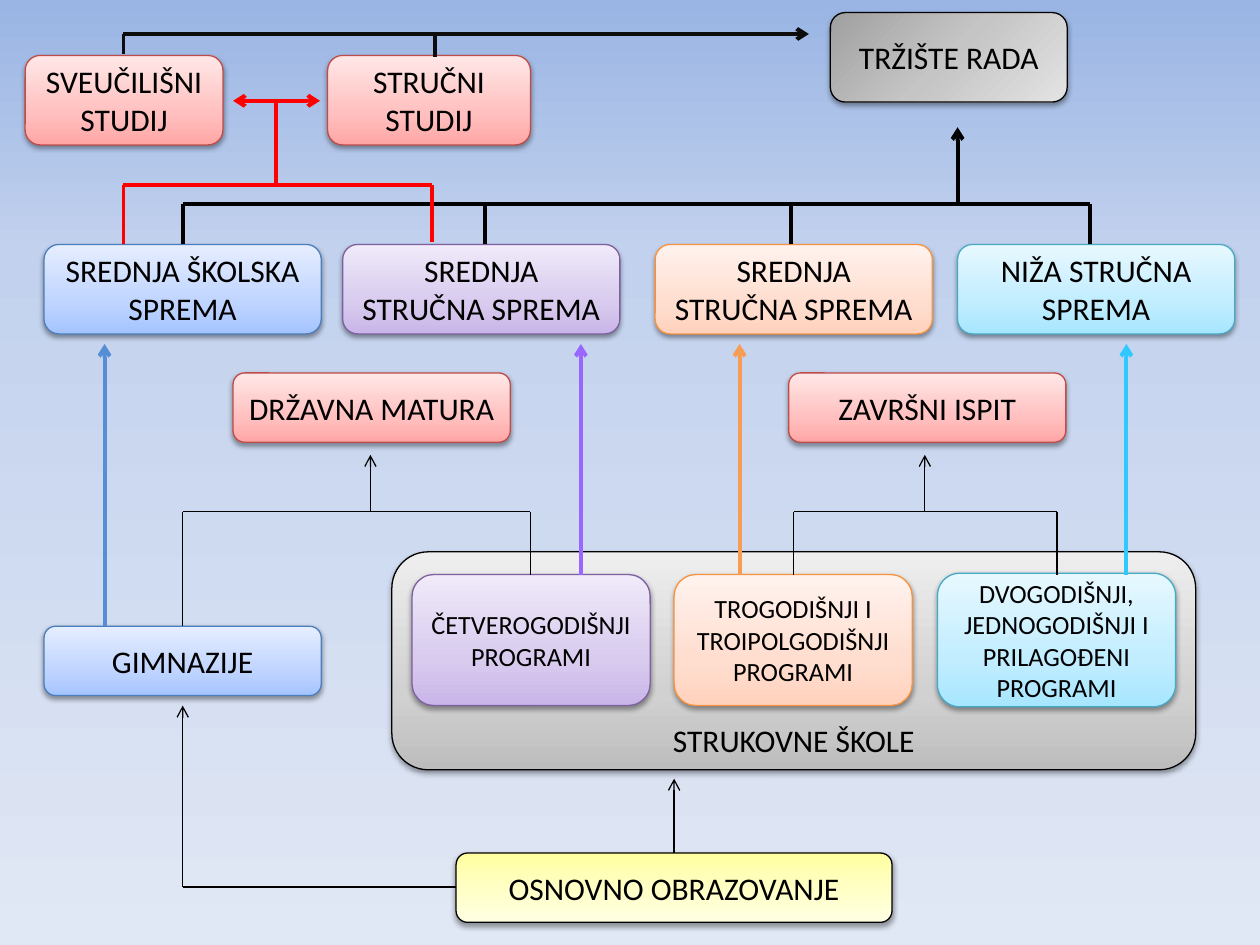
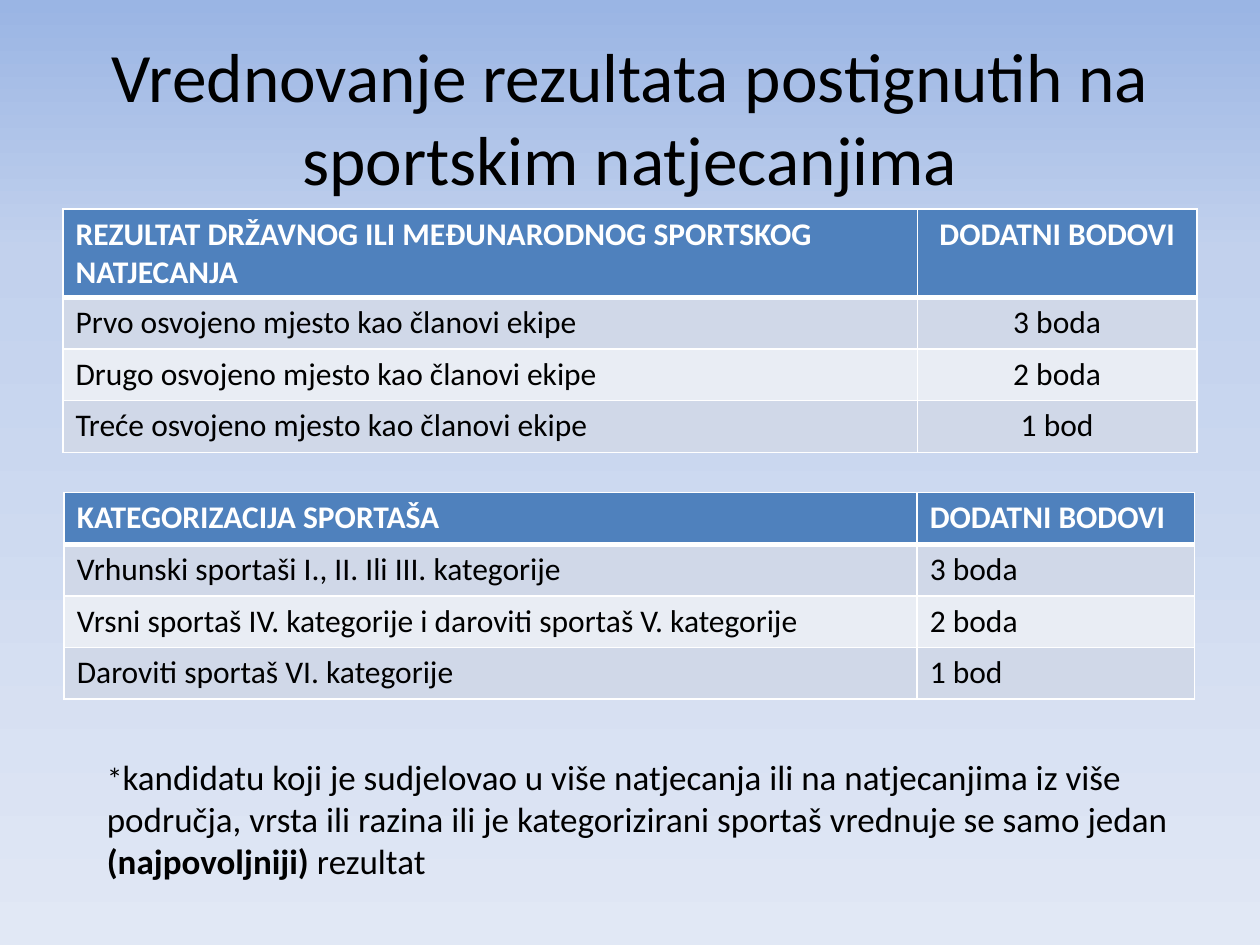
import pptx
import pptx.util
import pptx.dml.color
import pptx.enum.shapes
import pptx.enum.text
import pptx.oxml
import pptx.oxml.ns
from dataclasses import dataclass

Inches = pptx.util.Inches
Pt = pptx.util.Pt
qn = pptx.oxml.ns.qn
ALIGN = pptx.enum.text.PP_ALIGN
ANCHOR = pptx.enum.text.MSO_ANCHOR
SHAPE = pptx.enum.shapes.MSO_SHAPE
NS = 'xmlns:a="http://schemas.openxmlformats.org/drawingml/2006/main"'

FONT = "Calibri"
COLOR = {
    "black": "000000", "white": "FFFFFF", "ink": "0D0D0D", "red": "FF0000",
    "blue": "558ED5", "violet": "9966FF", "orange": "F79D53", "cyan": "2FC9FF",
    "head": "4F81BD", "odd": "D0D8E8", "even": "E9EDF4",
}
SKY = ((0, "9AB5E4"), (27, "C2D1ED"), (100, "E1E8F5"))


@dataclass(frozen=True)
class Look:
    stops: tuple
    line: str
    angle: int = 270


@dataclass(frozen=True)
class Box:
    text: str
    look: str
    x: float
    y: float
    w: float = 2.2
    h: float = 0.71
    size: float = 18
    low: bool = False


@dataclass(frozen=True)
class Wire:
    x1: float
    y1: float
    x2: float
    y2: float
    color: str = "black"
    width: float = 0.75
    tail: bool = False
    head: bool = False


@dataclass(frozen=True)
class Grid:
    x: float
    y: float
    cols: tuple
    first: float
    align: object
    rows: tuple


LOOKS = {
    "blue": Look(((0, "A4C4FF"), (35, "BFD4FF"), (100, "E6EEFF")), "4B7EBC"),
    "violet": Look(((0, "C9B5E8"), (35, "D8CBEE"), (100, "F0EAF9")), "7D60A0"),
    "orange": Look(((0, "FFD2BD"), (35, "FFDED0"), (100, "FFF2ED")), "F69240"),
    "cyan": Look(((0, "A7E6FF"), (35, "C1EDFF"), (100, "E7F8FF")), "46AAC5"),
    "red": Look(((0, "FFA6A5"), (35, "FFC0BF"), (100, "FFE7E7")), "BF4C48"),
    "gray": Look(((0, "BDBDBD"), (35, "D1D1D1"), (100, "EEEEEE")), "000000"),
    "steel": Look(((0, "A0A0A0"), (50, "C5C5C5"), (100, "E3E3E3")), "000000", 45),
    "yellow": Look(((0, "FFFFA0"), (50, "FFFFC5"), (100, "FFFFE3")), "000000", 90),
}


# Shared helpers
def rgb(code: str):
    return pptx.dml.color.RGBColor.from_string(code)


def xml(text: str):
    return pptx.oxml.parse_xml(text)


def blend(fill, root, stops: tuple, angle: int) -> None:
    """Fill with a gradient; the angle runs clockwise."""
    fill.gradient()
    fill.gradient_angle = (360 - angle) % 360
    items = next(root.iter(qn("a:gsLst")))
    for item in list(items):
        items.remove(item)
    for spot, code in stops:
        items.append(xml(f'<a:gs {NS} pos="{spot * 1000}"><a:srgbClr val="{code}"/></a:gs>'))


def write(frame, *runs, size: float = 18, color: str = "black", bold: bool = False,
          align=ALIGN.LEFT, anchor=ANCHOR.TOP) -> None:
    """Write runs, each a string or a (string, size, bold) tuple."""
    frame.word_wrap = True
    frame.vertical_anchor = anchor
    para = frame.paragraphs[0]
    para.alignment = align
    for item in runs:
        text, pts, strong = (item, size, bold) if isinstance(item, str) else item
        run = para.add_run()
        run.text = text
        run.font.name = FONT
        run.font.size = Pt(pts)
        run.font.bold = strong
        run.font.color.rgb = rgb(COLOR[color])


def add_page(deck):
    page = deck.slides.add_slide(deck.slide_layouts[6])
    blend(page.background.fill, page.element, SKY, 90)
    return page


def add_label(page, x: float, y: float, w: float, h: float, *runs, **form) -> None:
    area = page.shapes.add_textbox(Inches(x), Inches(y), Inches(w), Inches(h))
    write(area.text_frame, *runs, **form)


# Diagram parts
def draw_box(page, box: Box) -> None:
    look = LOOKS[box.look]
    shape = page.shapes.add_shape(SHAPE.ROUNDED_RECTANGLE, Inches(box.x), Inches(box.y),
                                  Inches(box.w), Inches(box.h))
    blend(shape.fill, shape.element, look.stops, look.angle)
    shape.line.color.rgb = rgb(look.line)
    shape.line.width = Pt(0.75)
    shape.shadow.inherit = False
    shape.element.spPr.find(qn("a:effectLst")).append(xml(
        f'<a:outerShdw {NS} blurRad="{Pt(3.1)}" dist="{Pt(1.6)}" dir="5400000" rotWithShape="0">'
        '<a:srgbClr val="000000"><a:alpha val="38000"/></a:srgbClr></a:outerShdw>'))
    frame = shape.text_frame
    write(frame, box.text, size=box.size, align=ALIGN.CENTER,
          anchor=ANCHOR.BOTTOM if box.low else ANCHOR.MIDDLE)
    if box.low:
        frame.margin_bottom = Inches(0)


def draw_wire(page, wire: Wire) -> None:
    line = page.shapes.add_connector(
        pptx.enum.shapes.MSO_CONNECTOR.STRAIGHT, Inches(wire.x1), Inches(wire.y1),
        Inches(wire.x2), Inches(wire.y2))
    line.line.color.rgb = rgb(COLOR[wire.color])
    line.line.width = Pt(wire.width)
    props = line.element.spPr
    for end, shown in (("headEnd", wire.head), ("tailEnd", wire.tail)):
        if shown:
            props.find(qn("a:ln")).append(xml(f'<a:{end} {NS} type="arrow"/>'))
    props.append(xml(f"<a:effectLst {NS}/>"))


def fork(roots: tuple, bus: float, tip: tuple, color: str = "black",
         width: float = 0.75, arrow: bool = True) -> list:
    """Join (x, y) roots on a level bus, then lead from it to the tip."""
    wires = [Wire(x, y, x, bus, color, width) for x, y in roots]
    wires.append(Wire(roots[0][0], bus, roots[-1][0], bus, color, width))
    wires.append(Wire(tip[0], bus, *tip, color, width, arrow))
    return wires


# Table parts
def edge(cell, side: str, width: float) -> None:
    cell._tc.get_or_add_tcPr().append(xml(
        f'<a:{side} {NS} w="{Pt(width)}"><a:solidFill>'
        f'<a:srgbClr val="{COLOR["white"]}"/></a:solidFill></a:{side}>'))


def draw_grid(page, grid: Grid) -> None:
    high = [grid.first] + [0.41] * (len(grid.rows) - 1)
    table = page.shapes.add_table(len(grid.rows), len(grid.cols), Inches(grid.x), Inches(grid.y),
                                  Inches(sum(grid.cols)), Inches(sum(high))).table
    for col, width in zip(table.columns, grid.cols):
        col.width = Inches(width)
    for r, texts in enumerate(grid.rows):
        table.rows[r].height = Inches(high[r])
        for c, text in enumerate(texts):
            cell = table.cell(r, c)
            for side in ("lnL", "lnR", "lnT", "lnB"):
                thick = (r, side) in ((0, "lnB"), (1, "lnT"))
                edge(cell, side, 3 if thick else 1)
            cell.fill.solid()
            shade = "head" if r == 0 else "odd" if r % 2 else "even"
            cell.fill.fore_color.rgb = rgb(COLOR[shade])
            write(cell.text_frame, text, color="black" if r else "white", bold=r == 0,
                  align=grid.align if c else ALIGN.LEFT)


# Slide 1: paths through the school system
BOXES = (
    Box("OSNOVNO OBRAZOVANJE", "yellow", 3.62, 6.77, 3.46, 0.55),
    Box("GIMNAZIJE", "blue", 0.35, 4.97, h=0.55),
    Box("STRUKOVNE ŠKOLE", "gray", 3.11, 4.38, 6.38, 1.73, low=True),
    Box("ČETVEROGODIŠNJI PROGRAMI", "violet", 3.27, 4.56, 1.89, 1.04, 15),
    Box("TROGODIŠNJI I TROIPOLGODIŠNJI PROGRAMI", "orange", 5.35, 4.56, 1.89, 1.04, 15),
    Box("DVOGODIŠNJI, JEDNOGODIŠNJI I PRILAGOĐENI PROGRAMI", "cyan", 7.44, 4.55, 1.89, 1.06, 15),
    Box("DRŽAVNA MATURA", "red", 1.85, 2.96, h=0.55),
    Box("ZAVRŠNI ISPIT", "red", 6.26, 2.96, h=0.55),
    Box("SREDNJA ŠKOLSKA SPREMA", "blue", 0.35, 1.94),
    Box("SREDNJA STRUČNA SPREMA", "violet", 2.72, 1.94),
    Box("SREDNJA STRUČNA SPREMA", "orange", 5.2, 1.94),
    Box("NIŽA STRUČNA SPREMA", "cyan", 7.6, 1.94),
    Box("SVEUČILIŠNI STUDIJ", "red", 0.2, 0.44, 1.57),
    Box("STRUČNI STUDIJ", "red", 2.6, 0.44, 1.61),
    Box("TRŽIŠTE RADA", "steel", 6.59, 0.1, 1.88),
)
RISERS = ((0.83, 4.97, "blue"), (4.61, 4.56, "violet"), (5.87, 4.56, "orange"), (8.94, 4.56, "cyan"))
WIRES = [
    # From primary school
    Wire(1.45, 7.04, 1.45, 5.6, tail=True),
    Wire(1.45, 7.04, 3.62, 7.04),
    Wire(5.35, 6.77, 5.35, 6.18, tail=True),
    # To the final exams
    *fork(((1.45, 4.97), (4.21, 4.56)), 4.06, (2.94, 3.61)),
    *fork(((6.3, 4.56), (8.39, 4.56)), 4.06, (7.34, 3.61)),
    # To the degrees
    *(Wire(x, y, x, 2.73, color, 2.25, True) for x, y, color in RISERS),
    # To the job market
    *fork(tuple((x, 1.94) for x in (1.45, 3.85, 6.28, 8.65)), 1.62, (7.6, 1.01), width=2.25),
    # To higher studies
    *fork(((0.98, 1.94), (3.43, 1.92)), 1.47, (2.19, 0.8), "red", 2.25, False),
    Wire(1.85, 0.8, 2.54, 0.8, "red", 2.25, True, True),
    # From studies to the job market
    Wire(0.98, 0.43, 0.98, 0.27, "ink", 2.25),
    Wire(3.45, 0.45, 3.45, 0.27, "ink", 2.25),
    Wire(0.98, 0.27, 6.42, 0.27, "ink", 2.25, True),
]

# Slide 2: points for sport results
GRIDS = (
    Grid(0.5, 1.66, (6.78, 2.22), 0.7, ALIGN.CENTER, (
        ("REZULTAT DRŽAVNOG ILI MEĐUNARODNOG SPORTSKOG NATJECANJA", "DODATNI BODOVI"),
        ("Prvo osvojeno mjesto kao članovi ekipe", "3 boda"),
        ("Drugo osvojeno mjesto kao članovi ekipe", "2 boda"),
        ("Treće osvojeno mjesto kao članovi ekipe", "1 bod"))),
    Grid(0.51, 3.91, (6.77, 2.2), 0.41, ALIGN.LEFT, (
        ("KATEGORIZACIJA SPORTAŠA", "DODATNI BODOVI"),
        ("Vrhunski sportaši I., II. Ili III. kategorije", "3 boda"),
        ("Vrsni sportaš IV. kategorije i daroviti sportaš V. kategorije", "2 boda"),
        ("Daroviti sportaš VI. kategorije", "1 bod"))),
)
NOTE = (
    ("*", 18, False),
    ("kandidatu koji je sudjelovao u više natjecanja ili na natjecanjima iz više područja, "
     "vrsta ili razina ili je kategorizirani sportaš vrednuje se samo jedan ", 20, False),
    ("(najpovoljniji) ", 20, True),
    ("rezultat", 20, False),
)


def main() -> None:
    deck = pptx.Presentation()
    deck.slide_width, deck.slide_height = Inches(10), Inches(7.5)

    page = add_page(deck)
    for box in BOXES:
        draw_box(page, box)
    for wire in WIRES:
        draw_wire(page, wire)

    page = add_page(deck)
    add_label(page, 0.5, 0.3, 9, 1.25, "Vrednovanje rezultata postignutih na sportskim natjecanjima",
              size=39.6, align=ALIGN.CENTER, anchor=ANCHOR.MIDDLE)
    for grid in GRIDS:
        draw_grid(page, grid)
    add_label(page, 0.75, 5.95, 9.06, 1.11, *NOTE)

    deck.save("out.pptx")


if __name__ == "__main__":
    main()
